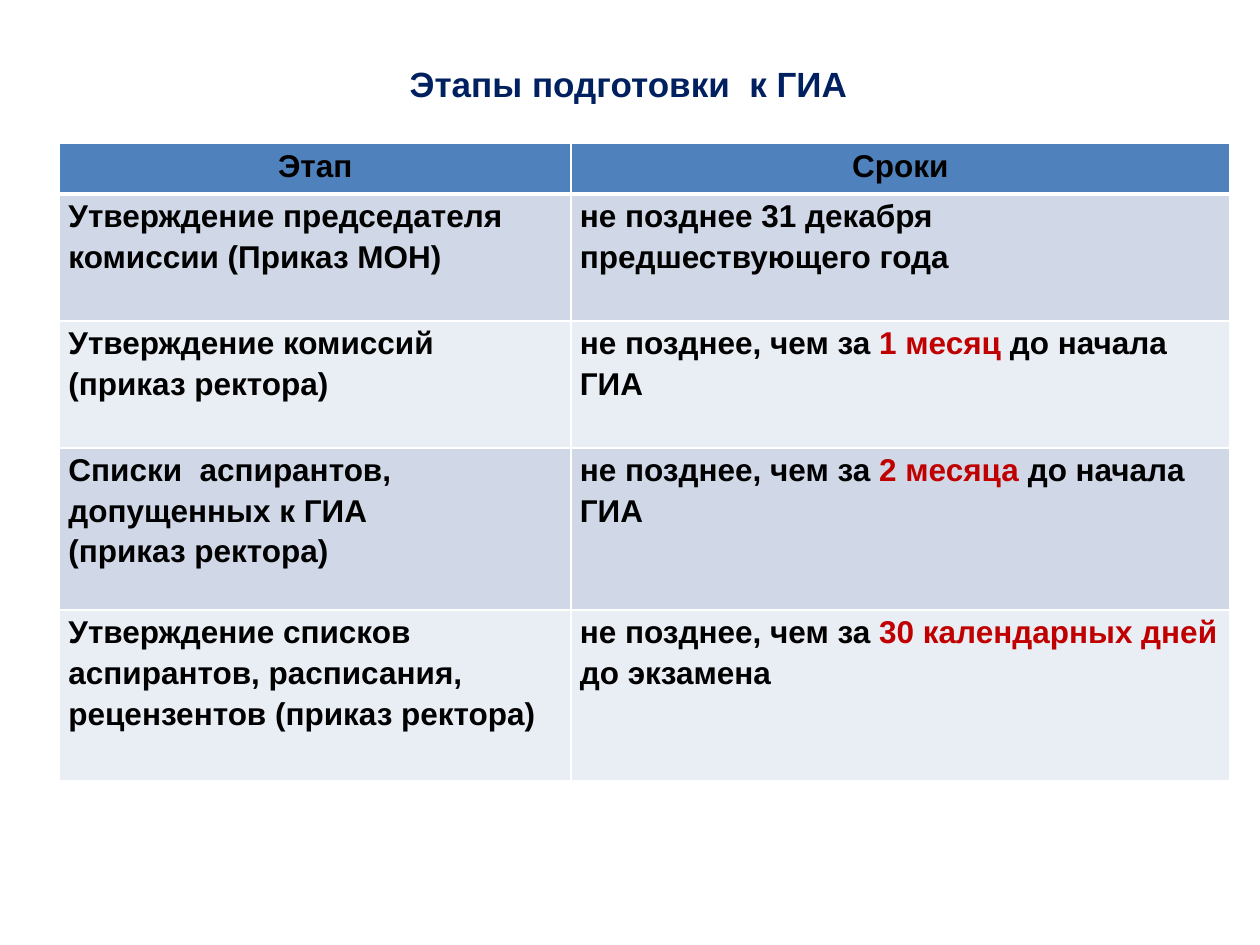
from lxml import etree
from pptx import Presentation
from pptx.dml.color import RGBColor
from pptx.enum.text import MSO_ANCHOR as Anchor, PP_ALIGN as Align
from pptx.oxml.ns import qn
from pptx.util import Cm, Pt


def color(value):
    return RGBColor.from_string(value)


def add_border(cell, side, width):
    line = etree.SubElement(cell._tc.get_or_add_tcPr(), qn(f"a:ln{side}"), w=str(Pt(width)))
    fill = etree.SubElement(line, qn("a:solidFill"))
    etree.SubElement(fill, qn("a:srgbClr"), val="FFFFFF")


presentation = Presentation()
presentation.slide_width = Cm(25.4)
presentation.slide_height = Cm(19.05)
slide = presentation.slides.add_slide(presentation.slide_layouts[6])

title = slide.shapes.add_textbox(Cm(1.2), Cm(0.76), Cm(22.94), Cm(1.83))
title.text_frame.word_wrap = True
title.text_frame.vertical_anchor = Anchor.MIDDLE
paragraph = title.text_frame.paragraphs[0]
paragraph.text = "Этапы подготовки  к ГИА"
paragraph.alignment = Align.CENTER
paragraph.font.name = "Arial"
paragraph.font.size = Pt(20)
paragraph.font.bold = True
paragraph.font.color.rgb = color("002060")

BLACK, RED = "000000", "C00000"
not_later = "не позднее, чем за "
rows = [
    (["Этап"], ["Сроки"]),
    (["Утверждение председателя комиссии (Приказ МОН)"],
     ["не позднее 31 декабря предшествующего года"]),
    (["Утверждение комиссий", "(приказ ректора)"],
     [(not_later, "1 месяц ", "до начала ГИА")]),
    (["Списки  аспирантов, допущенных к ГИА", "(приказ ректора)"],
     [(not_later, "2 месяца ", "до начала ГИА")]),
    (["Утверждение списков аспирантов, расписания, рецензентов (приказ ректора)"],
     [(not_later, "30 календарных дней ", "до экзамена")]),
]
column_widths = [10.31, 13.28]
row_heights = [1.03, 2.56, 2.56, 3.27, 3.43]

table = slide.shapes.add_table(
    len(rows), 2, Cm(1.2), Cm(2.88), Cm(sum(column_widths)), Cm(sum(row_heights))
).table
for column, width in zip(table.columns, column_widths):
    column.width = Cm(width)

for row_index, (row, height) in enumerate(zip(rows, row_heights)):
    table.rows[row_index].height = Cm(height)
    header = row_index == 0
    for column_index, lines in enumerate(row):
        cell = table.cell(row_index, column_index)
        for side in "LRTB":
            thick = header and side == "B" or row_index == 1 and side == "T"
            add_border(cell, side, 3 if thick else 1)
        cell.fill.solid()
        band = "D0D8E8" if row_index % 2 else "E9EDF4"
        cell.fill.fore_color.rgb = color("4F81BD" if header else band)
        if not header:
            cell.margin_left = cell.margin_right = Cm(0.18)
            cell.margin_top = cell.margin_bottom = Cm(0)
        for line_index, line in enumerate(lines):
            frame = cell.text_frame
            paragraph = frame.add_paragraph() if line_index else frame.paragraphs[0]
            paragraph.font.name = "Arial"
            paragraph.font.size = Pt(18)
            paragraph.font.bold = True
            if header:
                paragraph.alignment = Align.CENTER
            else:
                paragraph.line_spacing = 1.15
            parts = (line,) if isinstance(line, str) else line
            for part, part_color in zip(parts, (BLACK, RED, BLACK)):
                run = paragraph.add_run()
                run.text = part
                run.font.color.rgb = color(part_color)

presentation.save("out.pptx")
